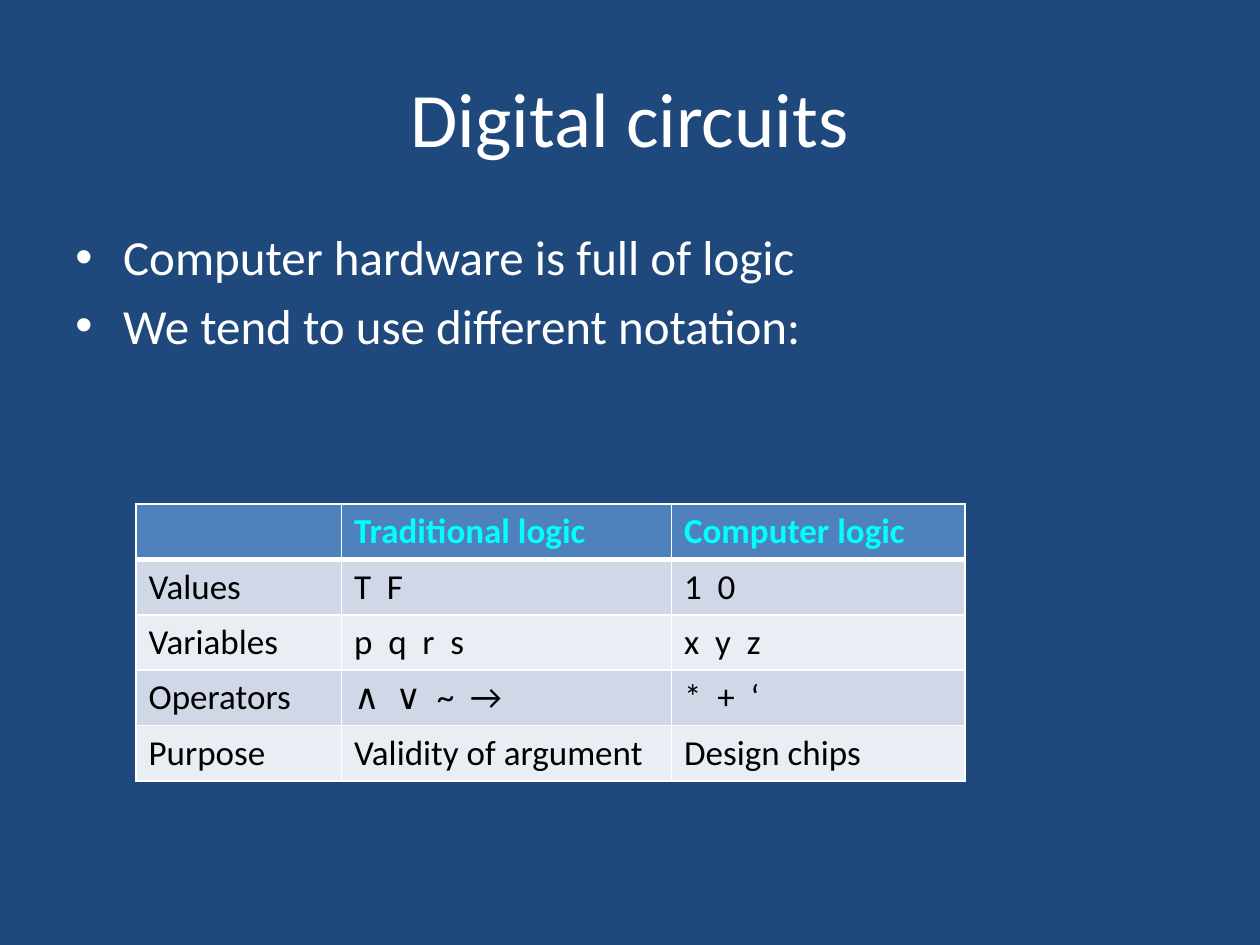
from lxml.etree import SubElement
from pptx import Presentation
from pptx.dml.color import RGBColor
from pptx.enum.text import MSO_ANCHOR as Anchor, PP_ALIGN as Align
from pptx.oxml.ns import qn
from pptx.util import Inches, Pt

NAVY = RGBColor(0x1F, 0x49, 0x7D)
WHITE = RGBColor(0xFF, 0xFF, 0xFF)
CYAN = RGBColor(0x00, 0xFF, 0xFF)
BLACK = RGBColor(0x00, 0x00, 0x00)
HEADER_BLUE = RGBColor(0x4F, 0x81, 0xBD)
BANDS = [RGBColor(0xD0, 0xD8, 0xE8), RGBColor(0xE9, 0xED, 0xF4)]


class SlideBuilder:
    font = "Calibri"

    def __init__(self, slide):
        self.slide = slide
        slide.background.fill.solid()
        slide.background.fill.fore_color.rgb = NAVY

    def add_run(self, paragraph, text, size, color, bold=False):
        run = paragraph.add_run()
        run.text = text
        run.font.name = self.font
        run.font.size = Pt(size)
        run.font.color.rgb = color
        run.font.bold = bold

    def text_frame(self, left, top, width, height, anchor):
        box = self.slide.shapes.add_textbox(
            Inches(left), Inches(top), Inches(width), Inches(height))
        frame = box.text_frame
        frame.word_wrap = True
        frame.vertical_anchor = anchor
        return frame

    def title(self, text, *place):
        paragraph = self.text_frame(*place, Anchor.MIDDLE).paragraphs[0]
        paragraph.alignment = Align.CENTER
        self.add_run(paragraph, text, 44, WHITE)

    def bullets(self, points, *place, size=28):
        frame = self.text_frame(*place, Anchor.TOP)
        for index, point in enumerate(points):
            paragraph = frame.add_paragraph() if index else frame.paragraphs[0]
            paragraph.space_before = Pt(size * 0.2)
            properties = paragraph._p.get_or_add_pPr()
            properties.set("marL", str(Inches(0.38)))
            properties.set("indent", str(-Inches(0.38)))
            SubElement(properties, qn("a:buFont"), typeface="Arial")
            SubElement(properties, qn("a:buChar"), char="•")
            self.add_run(paragraph, point, size, WHITE)

    def border(self, cell, side, width):
        line = SubElement(cell._tc.get_or_add_tcPr(), qn(f"a:ln{side}"), w=str(Pt(width)))
        fill = SubElement(line, qn("a:solidFill"))
        SubElement(fill, qn("a:srgbClr"), val=str(WHITE))

    def table(self, rows, left, top, widths, row_height):
        table = self.slide.shapes.add_table(
            len(rows), len(widths), Inches(left), Inches(top),
            Inches(sum(widths)), Inches(row_height * len(rows))).table
        for column, width in zip(table.columns, widths):
            column.width = Inches(width)
        for r, texts in enumerate(rows):
            table.rows[r].height = Inches(row_height)
            header = r == 0
            for c, text in enumerate(texts):
                cell = table.cell(r, c)
                # Borders come before the fill; the header rule is heavier
                for side in "LRTB":
                    heavy = (r, side) in [(0, "B"), (1, "T")]
                    self.border(cell, side, 3 if heavy else 1)
                cell.fill.solid()
                cell.fill.fore_color.rgb = HEADER_BLUE if header else BANDS[(r - 1) % 2]
                if text:
                    self.add_run(cell.text_frame.paragraphs[0], text, 20,
                                 CYAN if header else BLACK, header)


def main():
    deck = Presentation()
    deck.slide_width, deck.slide_height = Inches(10), Inches(7.5)
    builder = SlideBuilder(deck.slides.add_slide(deck.slide_layouts[6]))

    # Heading and points
    builder.title("Digital circuits", 0.5, 0.3, 9, 1.25)
    builder.bullets(["Computer hardware is full of logic",
                     "We tend to use different notation:"], 0.5, 1.75, 9, 4.95)

    # Notation comparison
    notation = [
        ("", "Traditional logic", "Computer logic"),
        ("Values", "T  F", "1  0"),
        ("Variables", "p  q  r  s", "x  y  z"),
        ("Operators", "∧  ∨  ~  →", "*  +  ‘"),
        ("Purpose", "Validity of argument", "Design chips"),
    ]
    builder.table(notation, 1.08, 4, [1.63, 2.62, 2.33], 0.44)

    deck.save("out.pptx")


if __name__ == "__main__":
    main()
